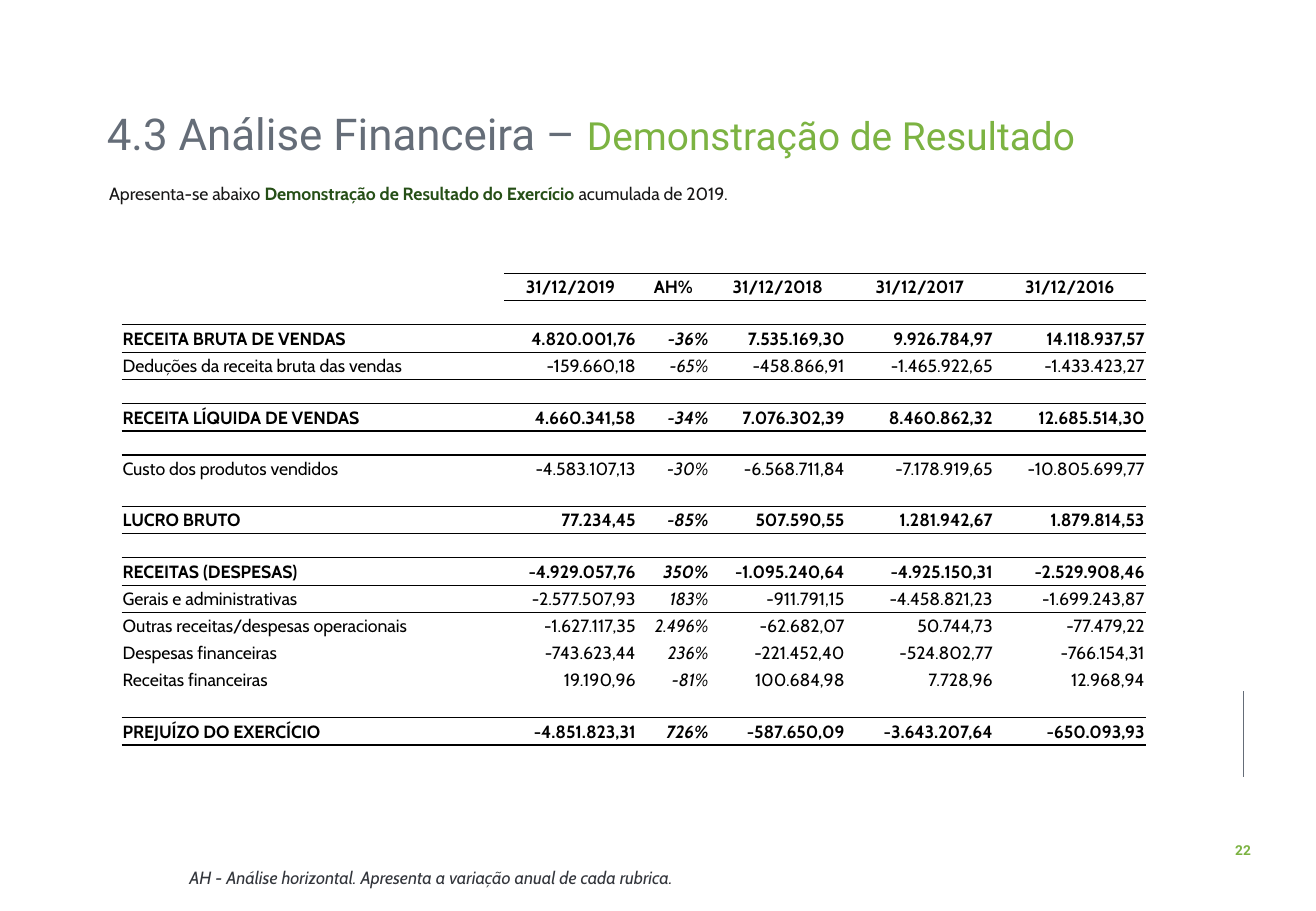
from lxml import etree
from pptx import Presentation
from pptx.dml.color import RGBColor
from pptx.enum.shapes import MSO_CONNECTOR
from pptx.enum.text import MSO_ANCHOR, PP_ALIGN
from pptx.oxml.ns import qn
from pptx.util import Pt

LEFT, CENTER, RIGHT, JUSTIFY = PP_ALIGN.LEFT, PP_ALIGN.CENTER, PP_ALIGN.RIGHT, PP_ALIGN.JUSTIFY
TOP, MIDDLE = MSO_ANCHOR.TOP, MSO_ANCHOR.MIDDLE
STRAIGHT = MSO_CONNECTOR.STRAIGHT

SLATE = RGBColor(0x65, 0x6D, 0x78)
GREEN = RGBColor(0x7C, 0xB3, 0x42)
DARK_GREEN = RGBColor(0x26, 0x4F, 0x17)
INK = RGBColor(0x18, 0x17, 0x17)
NOTE_GREY = RGBColor(0x33, 0x36, 0x3C)
BLACK = RGBColor(0, 0, 0)

PLAIN_STYLE = "{2D5ABB26-0587-4C30-8999-92F81FD0307C}"
COLUMN_WIDTHS = [15.8, 226.8, 78.5, 43.2, 80.6, 87.8, 90, 15.8]
GAP, TOTAL, DETAIL = 14.2, 16.5, 16
THIN, THICK = 0.5, 1

# Row height, width of the rule below a total, and the values from label to 2016
STATEMENT = [
    (GAP, 0, []),
    (TOTAL, THICK, ["", "31/12/2019", "AH%", "31/12/2018", "31/12/2017", "31/12/2016"]),
    (GAP, 0, []),
    (TOTAL, THICK, ["RECEITA BRUTA DE VENDAS", "4.820.001,76", "-36%",
                    "7.535.169,30", "9.926.784,97", "14.118.937,57"]),
    (DETAIL, 0, ["Deduções da receita bruta das vendas", "-159.660,18", "-65%",
                 "-458.866,91", "-1.465.922,65", "-1.433.423,27"]),
    (GAP, 0, []),
    (TOTAL, THICK, ["RECEITA LÍQUIDA DE VENDAS", "4.660.341,58", "-34%",
                    "7.076.302,39", "8.460.862,32", "12.685.514,30"]),
    (GAP, 0, []),
    (DETAIL, 0, ["Custo dos produtos vendidos", "-4.583.107,13", "-30%",
                 "-6.568.711,84", "-7.178.919,65", "-10.805.699,77"]),
    (GAP, 0, []),
    (TOTAL, THIN, ["LUCRO BRUTO", "77.234,45", "-85%",
                   "507.590,55", "1.281.942,67", "1.879.814,53"]),
    (GAP, 0, []),
    (TOTAL, THICK, ["RECEITAS (DESPESAS)", "-4.929.057,76", "350%",
                    "-1.095.240,64", "-4.925.150,31", "-2.529.908,46"]),
    (DETAIL, 0, ["Gerais e administrativas", "-2.577.507,93", "183%",
                 "-911.791,15", "-4.458.821,23", "-1.699.243,87"]),
    (DETAIL, 0, ["Outras receitas/despesas operacionais", "-1.627.117,35", "2.496%",
                 "-62.682,07", "50.744,73", "-77.479,22"]),
    (DETAIL, 0, ["Despesas financeiras", "-743.623,44", "236%",
                 "-221.452,40", "-524.802,77", "-766.154,31"]),
    (DETAIL, 0, ["Receitas financeiras", "19.190,96", "-81%",
                 "100.684,98", "7.728,96", "12.968,94"]),
    (GAP, 0, []),
    (TOTAL, THICK, ["PREJUÍZO DO EXERCÍCIO", "-4.851.823,31", "726%",
                    "-587.650,09", "-3.643.207,64", "-650.093,93"]),
    (GAP, 0, []),
]
HEADER_ROW, LABEL_COLUMN, AH_COLUMN, LAST_COLUMN = 1, 1, 3, 6


def add_run(paragraph, text, color, **font_format):
    run = paragraph.add_run()
    run.text = text
    run.font.color.rgb = color
    for name, value in font_format.items():
        setattr(run.font, name, value)


def add_text(slide, box, runs, wrap=True, anchor=TOP, indent=0, **paragraph_format):
    """Place one paragraph made of (text, color, font format) runs in the box."""
    frame = slide.shapes.add_textbox(*map(Pt, box)).text_frame
    frame.word_wrap = wrap
    frame.vertical_anchor = anchor
    paragraph = frame.paragraphs[0]
    for name, value in paragraph_format.items():
        setattr(paragraph, name, value)
    if indent:
        paragraph._p.get_or_add_pPr().set("indent", str(Pt(indent)))
    for text, color, font_format in runs:
        add_run(paragraph, text, color, **font_format)


def add_heading(slide, box):
    left, top, width, height = box
    roboto = {"name": "Roboto"}
    cabin = {"name": "Cabin", "size": Pt(10.5)}
    add_text(slide, (left, top, width, 38.2), [
        ("4.3 Análise Financeira – ", SLATE, {**roboto, "size": Pt(26)}),
        ("Demonstração de Resultado", GREEN, {**roboto, "size": Pt(23)}),
    ], anchor=MIDDLE, line_spacing=0.9)
    add_text(slide, (left + 1.4, top + 36.7, width, height - 36.7), [
        ("Apresenta-se abaixo ", INK, cabin),
        ("Demonstração de Resultado do Exercício ", DARK_GREEN, {**cabin, "bold": True}),
        ("acumulada de 2019.", INK, cabin),
    ], alignment=JUSTIFY, line_spacing=1.5)


def add_cell_rule(cell, tag, width):
    properties = cell._tc.get_or_add_tcPr()
    line = etree.SubElement(properties, qn(tag), w=str(Pt(width)))
    fill = etree.SubElement(line, qn("a:solidFill"))
    etree.SubElement(fill, qn("a:srgbClr"), val=str(BLACK))


def rule_above(row, column):
    """Width of the rule on the upper edge of a cell, or 0."""
    def ruled(index):
        first = LABEL_COLUMN + (index == HEADER_ROW)
        in_span = first <= column <= LAST_COLUMN
        return in_span and 0 <= index < len(STATEMENT) and STATEMENT[index][0] == TOTAL

    if ruled(row):
        return THIN
    return STATEMENT[row - 1][1] if ruled(row - 1) else 0


def fill_cell(cell, row, column):
    height, _, values = STATEMENT[row]
    margins = {"margin_left": 0.7, "margin_right": 0.7, "margin_top": 0.7, "margin_bottom": 0}
    for name, value in margins.items():
        setattr(cell, name, Pt(value))
    cell.vertical_anchor = MIDDLE
    for tag, edge in (("a:lnT", row), ("a:lnB", row + 1)):
        width = rule_above(edge, column)
        if width:
            add_cell_rule(cell, tag, width)
    cell.fill.background()

    paragraph = cell.text_frame.paragraphs[0]
    in_span = LABEL_COLUMN <= column <= LAST_COLUMN
    text = values[column - LABEL_COLUMN] if values and in_span else ""
    if not text:
        paragraph._p.get_or_add_endParaRPr().set("sz", "800")
        return
    if row == HEADER_ROW:
        paragraph.alignment = CENTER
    else:
        paragraph.alignment = LEFT if column == LABEL_COLUMN else RIGHT
    add_run(paragraph, text, BLACK, name="Cabin", size=Pt(10.5), bold=height == TOTAL,
            italic=column == AH_COLUMN and row != HEADER_ROW)


def add_income_statement(slide, left, top):
    heights = [height for height, _, _ in STATEMENT]
    frame = slide.shapes.add_table(len(heights), len(COLUMN_WIDTHS), Pt(left), Pt(top),
                                   Pt(sum(COLUMN_WIDTHS)), Pt(sum(heights)))
    table = frame.table
    table.first_row = table.horz_banding = False
    table._tbl.tblPr.find(qn("a:tableStyleId")).text = PLAIN_STYLE
    for column, width in zip(table.columns, COLUMN_WIDTHS):
        column.width = Pt(width)
    for row, height in enumerate(heights):
        table.rows[row].height = Pt(height)
        for column in range(len(COLUMN_WIDTHS)):
            fill_cell(table.cell(row, column), row, column)


def add_page_marker(slide, box):
    left, top, width, height = box
    middle = left + width / 2
    rule = slide.shapes.add_connector(STRAIGHT, Pt(middle), Pt(top), Pt(middle), Pt(top + 51))
    rule.line.color.rgb = SLATE
    rule.line.width = Pt(0.5)
    etree.SubElement(rule._element.spPr, qn("a:effectLst"))
    add_text(slide, (left, top + height - 17.3, width, 17.3),
             [("22", GREEN, {"name": "Roboto", "size": Pt(8.1), "bold": True})],
             wrap=False, alignment=CENTER)


def add_note(slide, box):
    add_text(slide, box, [
        ("AH - Análise horizontal. Apresenta a variação anual de cada rubrica.", NOTE_GREY,
         {"name": "Cabin", "size": Pt(10.5), "italic": True}),
    ], indent=22.3, alignment=JUSTIFY, line_spacing=1.14)


def main():
    deck = Presentation()
    deck.slide_width, deck.slide_height = Pt(779.76), Pt(540)
    slide = deck.slides.add_slide(deck.slide_layouts[6])
    add_page_marker(slide, (724.3, 409.7, 24.5, 103))
    add_heading(slide, (56.2, 62, 639.4, 61.2))
    add_note(slide, (82.8, 508.3, 390.2, 20.9))
    add_income_statement(slide, 56.2, 147.6)
    deck.save("out.pptx")


if __name__ == "__main__":
    main()
